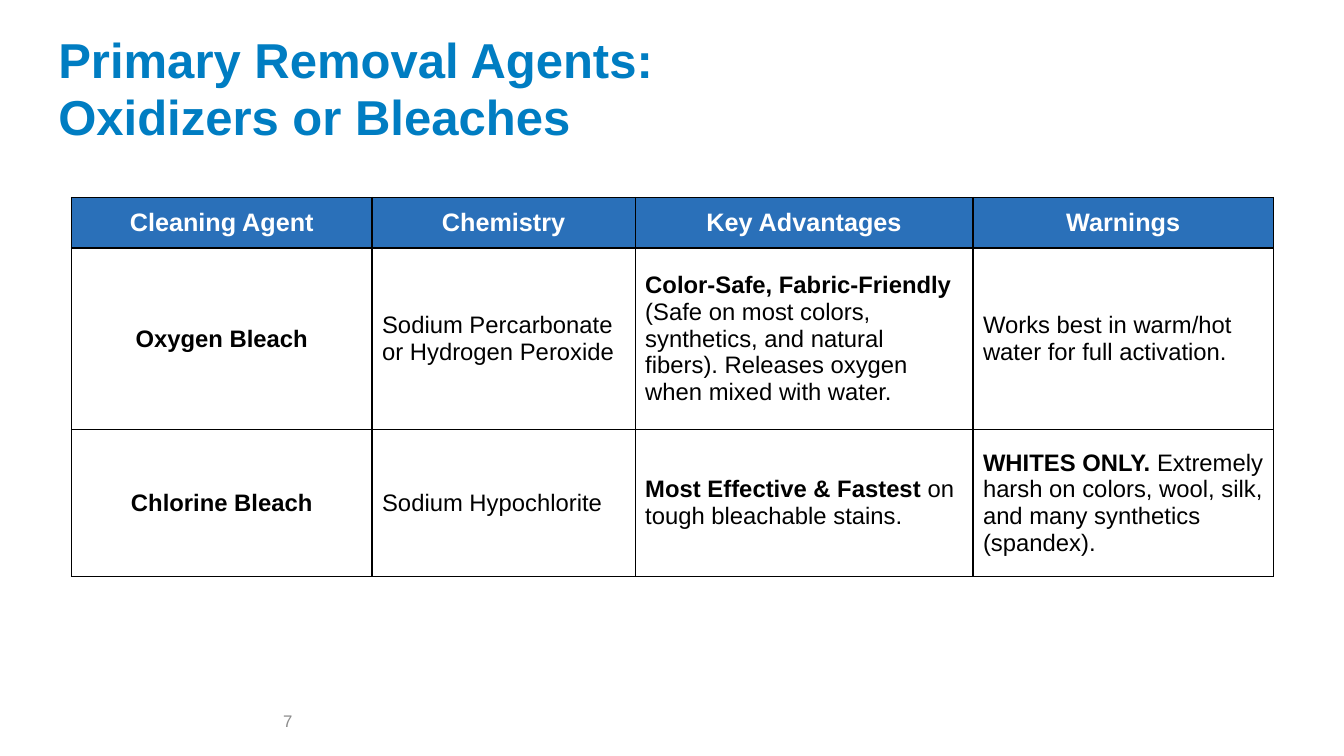
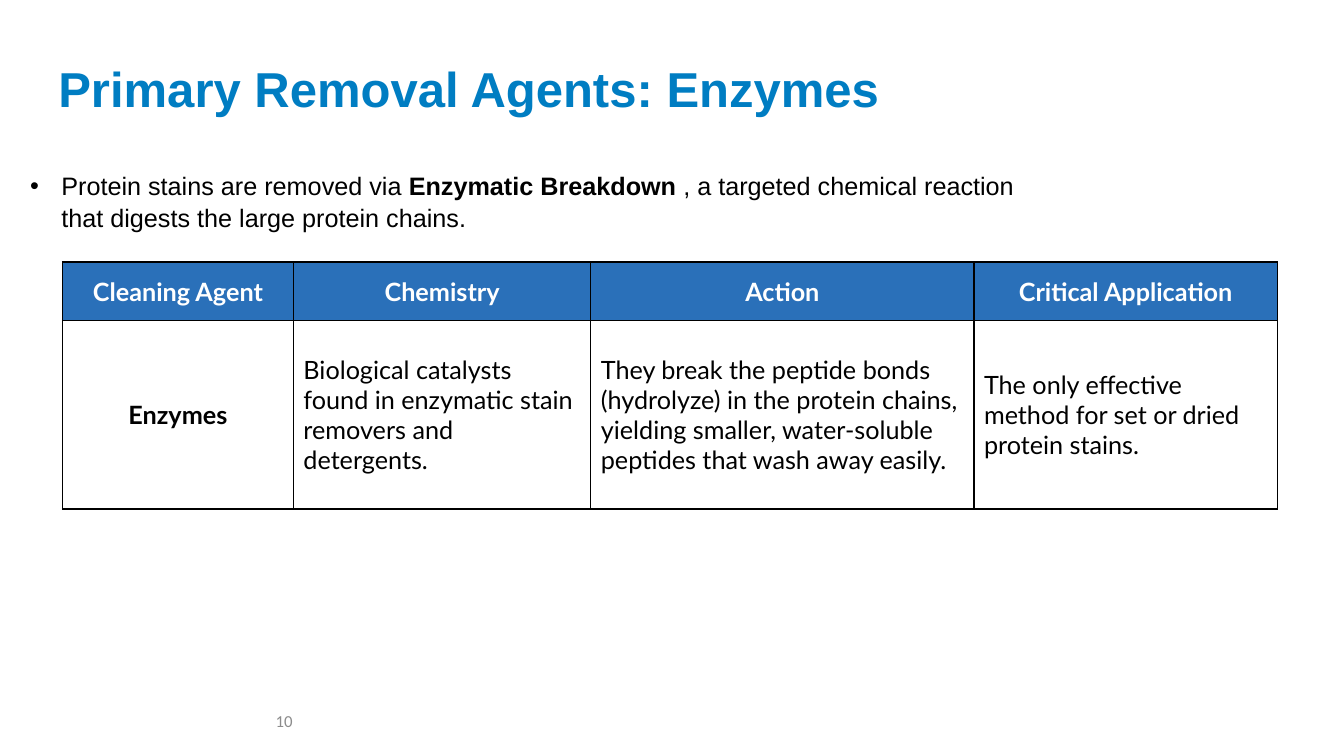
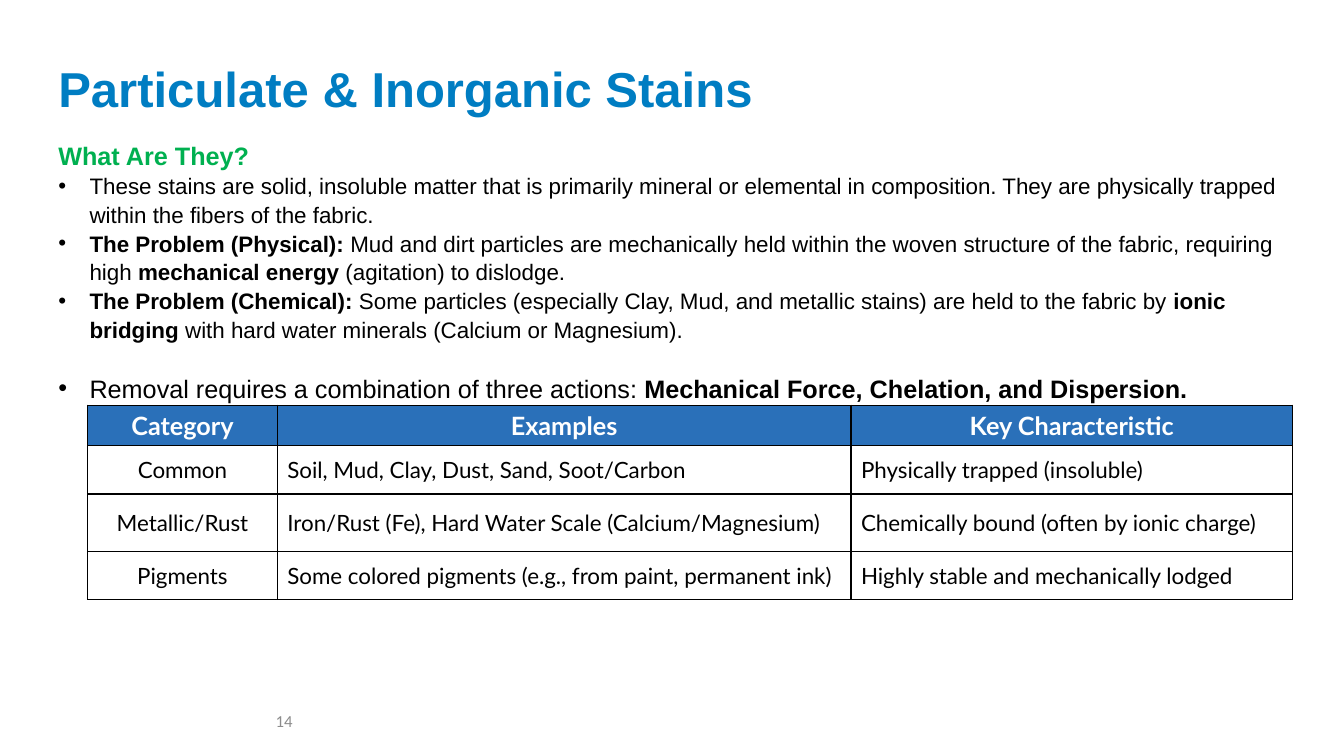
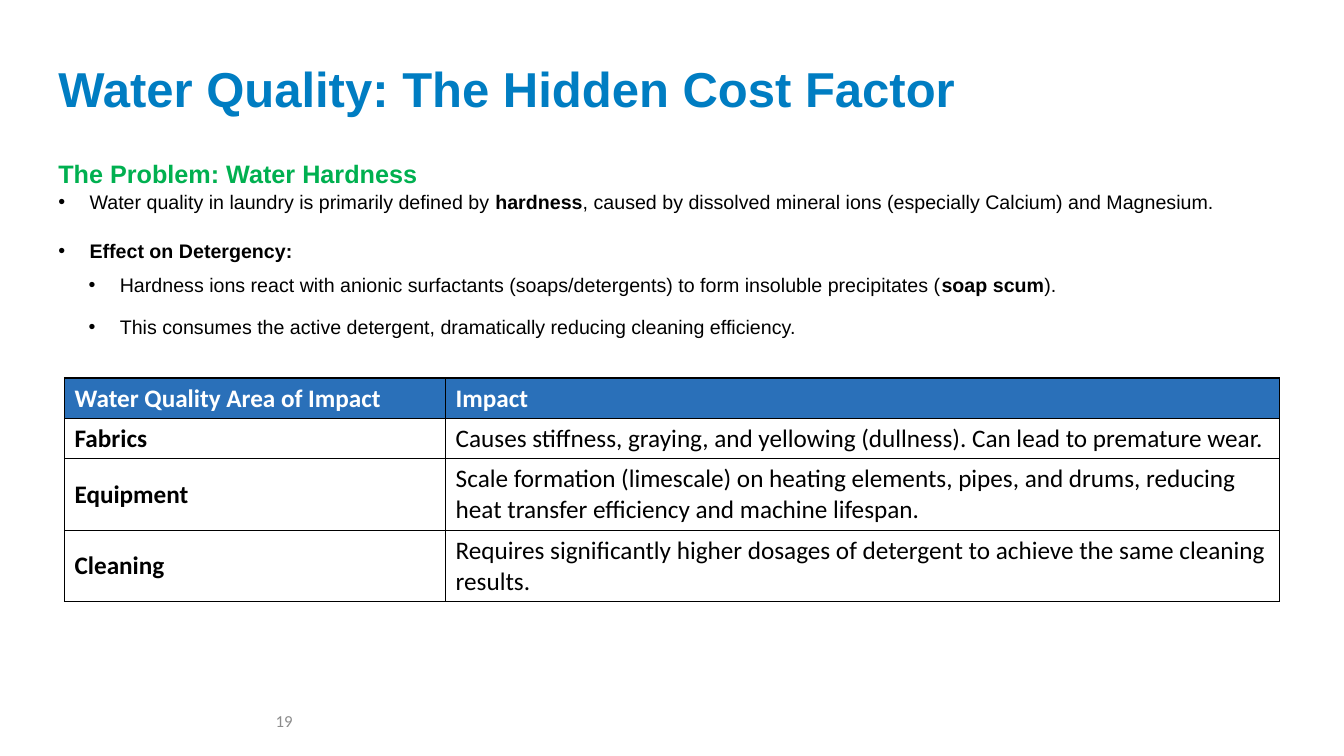
from dataclasses import dataclass

from lxml.etree import SubElement
from pptx import Presentation
from pptx.dml.color import RGBColor
from pptx.enum.text import MSO_ANCHOR as Anchor, PP_ALIGN as Align
from pptx.oxml.ns import qn
from pptx.util import Emu, Pt

EMU_PER_PX = 9144  # 100 px to the inch

BLACK = RGBColor(0x00, 0x00, 0x00)
WHITE = RGBColor(0xFF, 0xFF, 0xFF)
GRAY = RGBColor(0x8C, 0x8C, 0x8C)
TITLE_BLUE = RGBColor(0x00, 0x7D, 0xC2)
HEADER_BLUE = RGBColor(0x2A, 0x70, 0xB9)
GREEN = RGBColor(0x00, 0xB0, 0x50)


def px(length):
    return Emu(length * EMU_PER_PX)


@dataclass
class Line:
    """A body paragraph; indent is the text's left edge in px, 0 for no bullet."""
    text: str
    size: int
    indent: int = 31
    before: int = 0
    after: int = 0
    color: RGBColor = BLACK


def heading(text):
    return Line(f"**{text}**", 18, indent=0, color=GREEN)


class Deck:
    FONT = "Arial"
    HANGING = 31
    BODY_SPACING = 1.07
    TITLE_SPACING = 0.97

    def __init__(self):
        self.presentation = Presentation()
        self.presentation.slide_width = px(1333)
        self.presentation.slide_height = px(750)
        self.slide = None

    def new_slide(self, title, number, number_font="Calibri"):
        layout = self.presentation.slide_layouts[6]
        self.slide = self.presentation.slides.add_slide(layout)
        self.title(title)
        self.page_number(number, number_font)

    def add_runs(self, paragraph, text, size, color, font=FONT):
        """Add runs; parts between double asterisks are bold."""
        for index, part in enumerate(text.split("**")):
            if part:
                run = paragraph.add_run()
                run.text = part
                run.font.name = font
                run.font.size = Pt(size)
                run.font.bold = index % 2 == 1
                run.font.color.rgb = color

    def text_frame(self, left, top, width, height, anchor=Anchor.TOP):
        box = self.slide.shapes.add_textbox(px(left), px(top), px(width), px(height))
        frame = box.text_frame
        frame.word_wrap = True
        frame.vertical_anchor = anchor
        return frame

    def title(self, lines):
        paragraph = self.text_frame(48, 17, 1051, 145, Anchor.MIDDLE).paragraphs[0]
        paragraph.line_spacing = self.TITLE_SPACING
        for index, line in enumerate(lines.split("\n")):
            if index:
                paragraph.add_line_break()
            self.add_runs(paragraph, f"**{line}**", 35, TITLE_BLUE)

    def page_number(self, number, font):
        paragraph = self.text_frame(0, 695, 300, 40, Anchor.MIDDLE).paragraphs[0]
        paragraph.alignment = Align.RIGHT
        self.add_runs(paragraph, str(number), 12, GRAY, font)

    def bullet(self, paragraph, indent):
        properties = paragraph._p.get_or_add_pPr()
        properties.set("marL", str(px(indent)))
        properties.set("indent", str(px(-self.HANGING)))
        SubElement(properties, qn("a:buFont"), typeface=self.FONT)
        SubElement(properties, qn("a:buChar"), char="•")

    def body(self, left, top, width, height, lines):
        frame = self.text_frame(left, top, width, height)
        for index, line in enumerate(lines):
            paragraph = frame.add_paragraph() if index else frame.paragraphs[0]
            if line.indent:
                self.bullet(paragraph, line.indent)
            paragraph.line_spacing = self.BODY_SPACING
            paragraph.space_before = Pt(line.before)
            paragraph.space_after = Pt(line.after)
            self.add_runs(paragraph, line.text, line.size, line.color)

    def border(self, cell):
        properties = cell._tc.get_or_add_tcPr()
        for side in ("lnL", "lnR", "lnT", "lnB"):
            line = SubElement(properties, qn(f"a:{side}"), w=str(Pt(1)))
            fill = SubElement(line, qn("a:solidFill"))
            SubElement(fill, qn("a:srgbClr"), val=str(BLACK))

    def table(self, left, top, widths, heights, rows, size, font, centered=True):
        """Draw rows under a blue header; centered covers header and first column."""
        table = self.slide.shapes.add_table(
            len(rows), len(widths), px(left), px(top),
            px(sum(widths)), px(sum(heights))).table
        table.first_row = table.horz_banding = False
        for column, width in zip(table.columns, widths):
            column.width = px(width)
        for r, (texts, height) in enumerate(zip(rows, heights)):
            table.rows[r].height = px(height)
            for c, text in enumerate(texts):
                cell = table.cell(r, c)
                cell.vertical_anchor = Anchor.MIDDLE
                self.border(cell)
                paragraph = cell.text_frame.paragraphs[0]
                if centered and (r == 0 or c == 0):
                    paragraph.alignment = Align.CENTER
                if r == 0:
                    cell.fill.solid()
                    cell.fill.fore_color.rgb = HEADER_BLUE
                    self.add_runs(paragraph, f"**{text}**", 18, WHITE, font)
                else:
                    cell.fill.background()
                    self.add_runs(paragraph, text, size, BLACK, font)


def oxidizers(deck):
    deck.new_slide("Primary Removal Agents: \nOxidizers or Bleaches", 7, "Arial")
    deck.table(71, 196, [298, 261, 335, 298], [50, 180, 146], [
        ["Cleaning Agent", "Chemistry", "Key Advantages", "Warnings"],
        ["**Oxygen Bleach**",
         "Sodium Percarbonate or Hydrogen Peroxide",
         "**Color-Safe, Fabric-Friendly** (Safe on most colors, synthetics, "
         "and natural fibers). Releases oxygen when mixed with water.",
         "Works best in warm/hot water for full activation."],
        ["**Chlorine Bleach**",
         "Sodium Hypochlorite",
         "**Most Effective & Fastest** on tough bleachable stains.",
         "**WHITES ONLY.** Extremely harsh on colors, wool, silk, "
         "and many synthetics (spandex)."],
    ], 17, "Arial")


def enzymes(deck):
    deck.new_slide("Primary Removal Agents: Enzymes", 10)
    deck.body(20, 162, 1025, 95, [
        Line("Protein stains are removed via **Enzymatic Breakdown** , a targeted "
             "chemical reaction that digests the large protein chains.", 18, after=6),
    ])
    deck.table(62, 260, [229, 295, 380, 301], [58, 187], [
        ["Cleaning Agent", "Chemistry", "Action", "Critical Application"],
        ["**Enzymes**",
         "Biological catalysts found in enzymatic stain removers and detergents.",
         "They break the peptide bonds (hydrolyze) in the protein chains, yielding "
         "smaller, water-soluble peptides that wash away easily.",
         "The only effective method for set or dried protein stains."],
    ], 18, "Lato")


def particulate_stains(deck):
    deck.new_slide("Particulate & Inorganic Stains", 14)
    deck.body(48, 132, 1272, 563, [
        heading("What Are They?"),
        Line("These stains are solid, insoluble matter that is primarily mineral or "
             "elemental in composition. They are physically trapped within the fibers "
             "of the fabric.", 16),
        Line("**The Problem (Physical):** Mud and dirt particles are mechanically held "
             "within the woven structure of the fabric, requiring high "
             "**mechanical energy** (agitation) to dislodge.", 16),
        Line("**The Problem (Chemical):** Some particles (especially Clay, Mud, and "
             "metallic stains) are held to the fabric by **ionic bridging** with hard "
             "water minerals (Calcium or Magnesium).", 16),
        Line("Removal requires a combination of three actions: "
             "**Mechanical Force, Chelation, and Dispersion.**", 18, before=20),
    ])
    deck.table(87, 402, [188, 569, 438], [40, 48, 57, 48], [
        ["Category", "Examples", "Key Characteristic"],
        ["Common", "Soil, Mud, Clay, Dust, Sand, Soot/Carbon",
         "Physically trapped (insoluble)"],
        ["Metallic/Rust", "Iron/Rust (Fe), Hard Water Scale (Calcium/Magnesium)",
         "Chemically bound (often by ionic charge)"],
        ["Pigments", "Some colored pigments (e.g., from paint, permanent ink)",
         "Highly stable and mechanically lodged"],
    ], 16, "Lato")


def water_quality(deck):
    deck.new_slide("Water Quality: The Hidden Cost Factor", 19)
    deck.body(48, 150, 1272, 223, [
        heading("The Problem: Water Hardness"),
        Line("Water quality in laundry is primarily defined by **hardness**, caused by "
             "dissolved mineral ions (especially Calcium) and Magnesium.", 14),
        Line("**Effect on Detergency:**", 14, before=17),
        Line("Hardness ions react with anionic surfactants (soaps/detergents) to form "
             "insoluble precipitates (**soap scum**).", 14, 61, 6, 6),
        Line("This consumes the active detergent, dramatically reducing cleaning "
             "efficiency.", 14, 61, 6, 6),
    ])
    deck.table(64, 375, [378, 827], [40, 40, 71, 71], [
        ["Water Quality Area of Impact", "Impact"],
        ["**Fabrics**", "Causes stiffness, graying, and yellowing (dullness). "
                        "Can lead to premature wear."],
        ["**Equipment**", "Scale formation (limescale) on heating elements, pipes, and "
                          "drums, reducing heat transfer efficiency and machine lifespan."],
        ["**Cleaning**", "Requires significantly higher dosages of detergent to achieve "
                         "the same cleaning results."],
    ], 18, "Calibri", centered=False)


def main():
    deck = Deck()
    for build in (oxidizers, enzymes, particulate_stains, water_quality):
        build(deck)
    deck.presentation.save("out.pptx")


if __name__ == "__main__":
    main()
